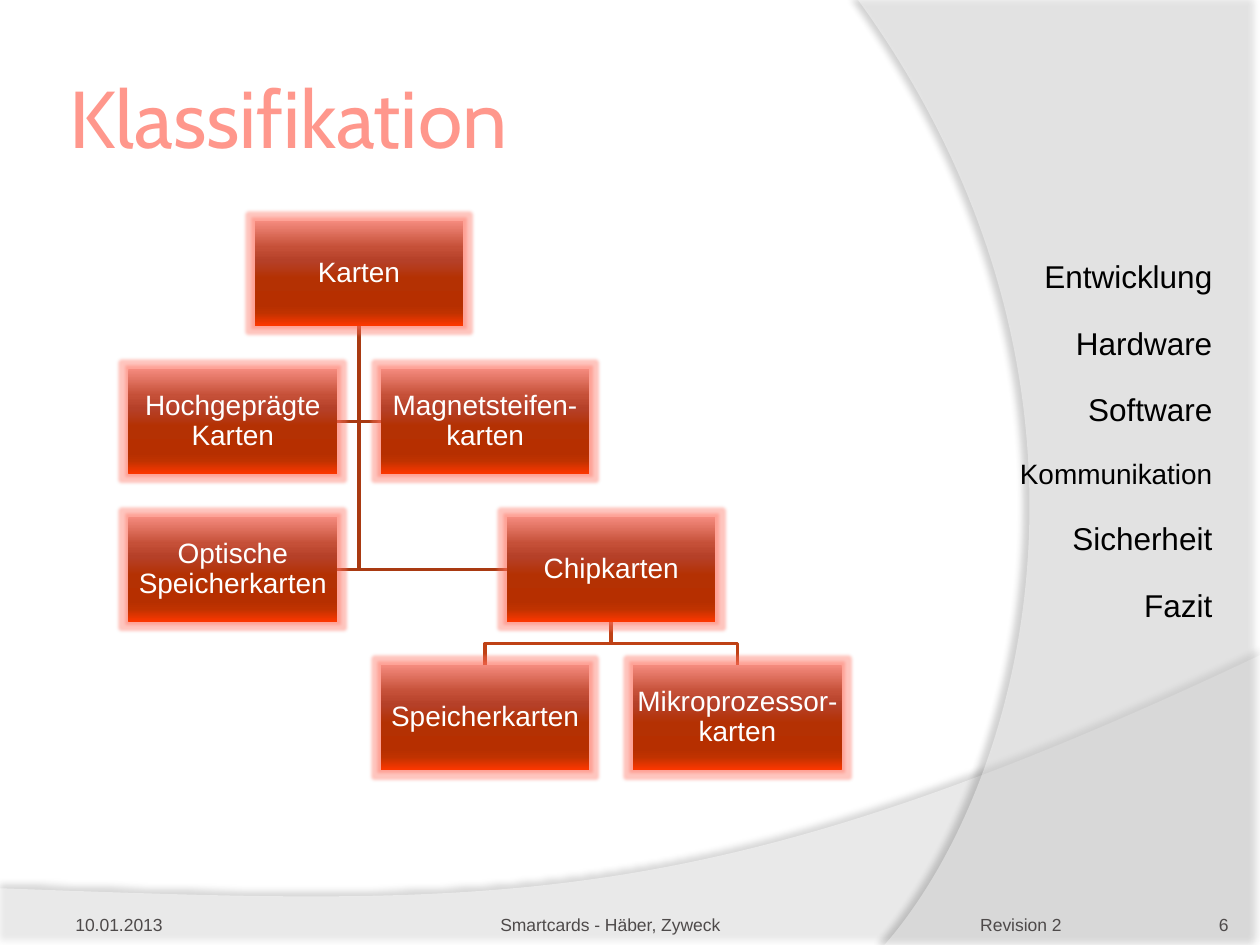
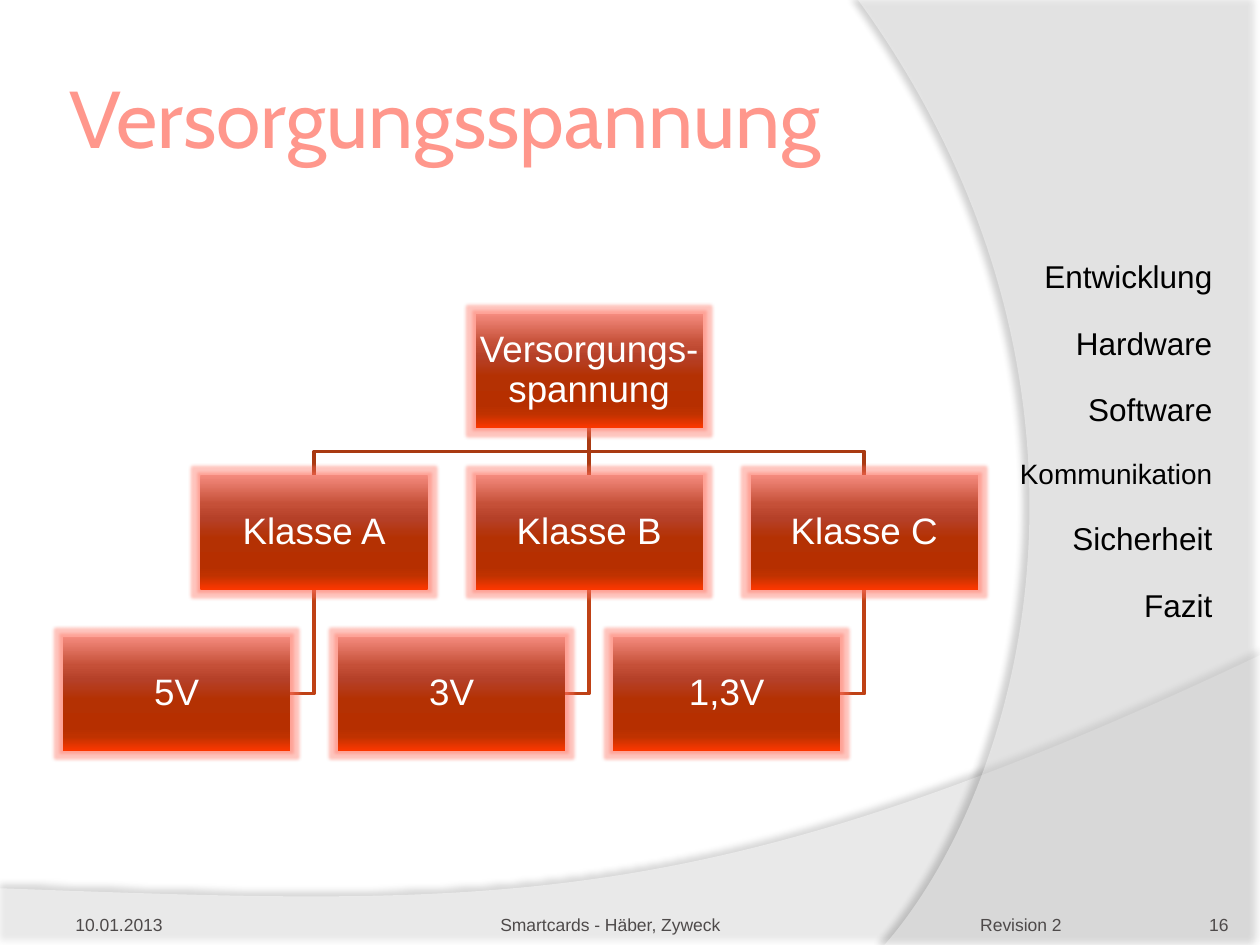
import dataclasses
import typing

import lxml.etree
import pptx
import pptx.dml.color
import pptx.enum.shapes
import pptx.enum.text
import pptx.oxml.ns
import pptx.util

RGBColor = pptx.dml.color.RGBColor
Align = pptx.enum.text.PP_ALIGN
Anchor = pptx.enum.text.MSO_ANCHOR
Inches, Pt = pptx.util.Inches, pptx.util.Pt

WHITE = RGBColor(0xFF, 0xFF, 0xFF)
BLACK = RGBColor(0, 0, 0)
TITLE_PINK = RGBColor(0xFF, 0x97, 0x8C)
GLOW_RED = RGBColor(0xFF, 0x6E, 0x5C)
FOOTER_GREY = RGBColor(0x4E, 0x4A, 0x4A)
ROOT_LINE = RGBColor(0xA9, 0x3A, 0x12)
BRANCH_LINE = RGBColor(0xBF, 0x41, 0x15)
BOX_GRADIENT = (
    (0, RGBColor(0xF4, 0x8A, 0x7D)),
    (25, RGBColor(0xC5, 0x50, 0x38)),
    (38, RGBColor(0xB5, 0x40, 0x28)),
    (55, RGBColor(0xB4, 0x31, 0x03)),
    (80, RGBColor(0xB6, 0x2F, 0x00)),
    (88, RGBColor(0xBF, 0x32, 0x00)),
    (100, RGBColor(0xFB, 0x37, 0x00)),
)

SLIDE_WIDTH, SLIDE_HEIGHT = Inches(10), Inches(7.5)
TOP, LEFT, BOTTOM, RIGHT = range(4)  # connection sites of a rectangle
CHAPTERS = ("Entwicklung", "Hardware", "Software", "Kommunikation", "Sicherheit", "Fazit")
CHAPTER_SIZES = {"Kommunikation": 16}

Point = tuple[float, float]


@dataclasses.dataclass(frozen=True)
class Region:
    """A rectangle in percent of the slide's width and height."""
    left: float
    top: float
    width: float
    height: float

    def lengths(self) -> tuple[int, int, int, int]:
        return (across(self.left), down(self.top), across(self.width), down(self.height))


@dataclasses.dataclass(frozen=True)
class Band:
    """A translucent area: a Bézier curve closed by straight corners, in percent."""
    curve: tuple[Point, Point, Point, Point]
    corners: tuple[Point, ...]
    opacity: int
    shadow_opacity: int
    shadow_distance: float
    shadow_angle: int


@dataclasses.dataclass(frozen=True)
class Node:
    """A box of a tree; side is where the line from the parent arrives."""
    text: str
    column: int
    row: int
    parent: typing.Optional[int] = None
    side: int = TOP


@dataclasses.dataclass(frozen=True)
class Tree:
    title: str
    number: int
    left: float
    top: float
    box_width: float
    font_size: int
    nodes: tuple[Node, ...]


BANDS = (
    Band(curve=((100, 69.33), (55.9, 97.2), (39.1, 95.87), (0, 94)),
         corners=((0, 100), (100, 100)),
         opacity=45, shadow_opacity=35, shadow_distance=3.5, shadow_angle=270),
    Band(curve=((70.2, 100), (81.6, 82.53), (89.9, 40), (68.1, 0)),
         corners=((100, 0), (100, 100)),
         opacity=40, shadow_opacity=45, shadow_distance=4, shadow_angle=180),
)

TREES = (
    Tree("Klassifikation", 6, left=10.2, top=23.4, box_width=16.55, font_size=16, nodes=(
        Node("Karten", 1, 0),
        Node("Hochgeprägte Karten", 0, 1, parent=0, side=RIGHT),
        Node("Magnetsteifen-karten", 2, 1, parent=0, side=LEFT),
        Node("Optische Speicherkarten", 0, 2, parent=0, side=RIGHT),
        Node("Chipkarten", 3, 2, parent=0, side=LEFT),
        Node("Speicherkarten", 2, 3, parent=4),
        Node("Mikroprozessor-karten", 4, 3, parent=4),
    )),
    Tree("Versorgungsspannung", 16, left=5, top=33.23, box_width=18.04, font_size=21, nodes=(
        Node("Versorgungs-spannung", 3, 0),
        Node("Klasse A", 1, 1, parent=0),
        Node("Klasse B", 3, 1, parent=0),
        Node("Klasse C", 5, 1, parent=0),
        Node("5V", 0, 2, parent=1, side=RIGHT),
        Node("3V", 2, 2, parent=2, side=RIGHT),
        Node("1,3V", 4, 2, parent=3, side=RIGHT),
    )),
)


def across(percent: float) -> int:
    return round(SLIDE_WIDTH * percent / 100)


def down(percent: float) -> int:
    return round(SLIDE_HEIGHT * percent / 100)


def add_element(parent, name: str, **attributes):
    element = lxml.etree.SubElement(parent, pptx.oxml.ns.qn(name))
    for key, value in attributes.items():
        element.set(key, str(value))
    return element


def add_color(parent, color: RGBColor, opacity: int = 100) -> None:
    element = add_element(parent, "a:srgbClr", val=color)
    if opacity < 100:
        add_element(element, "a:alpha", val=opacity * 1000)


def find(shape, name: str):
    return shape.element.find(".//" + pptx.oxml.ns.qn(name))


def write_text(frame, lines: typing.Sequence[str], *, size: float, color: RGBColor,
               font: str = "Arial", align=Align.LEFT, anchor=Anchor.MIDDLE,
               insets: tuple[float, ...] = (0.1, 0.05, 0.1, 0.05), before: float = 0,
               after: float = 0, spacing: float = 1.0,
               sizes: typing.Optional[dict[str, float]] = None) -> None:
    """Fill a text frame, one paragraph a line; sizes overrides the size of single lines."""
    frame.word_wrap = True
    frame.vertical_anchor = anchor
    (frame.margin_left, frame.margin_top,
     frame.margin_right, frame.margin_bottom) = map(Inches, insets)
    for index, line in enumerate(lines):
        paragraph = frame.add_paragraph() if index else frame.paragraphs[0]
        paragraph.alignment = align
        paragraph.line_spacing = spacing
        paragraph.space_before, paragraph.space_after = Pt(before), Pt(after)
        run = paragraph.add_run()
        run.text = line
        run.font.name = font
        run.font.size = Pt((sizes or {}).get(line, size))
        run.font.color.rgb = color


def add_text(slide, region: Region, *lines: str, **text_format) -> None:
    write_text(slide.shapes.add_textbox(*region.lengths()).text_frame, lines, **text_format)


def add_outline(slide, points: typing.Sequence[tuple[int, int]], close: bool):
    builder = slide.shapes.build_freeform(*points[0])
    builder.add_line_segments(points[1:], close=close)
    shape = builder.convert_to_shape()
    shape.shadow.inherit = False
    return shape


def bend_first_segments(shape) -> None:
    """Turn the first three straight segments into one cubic curve."""
    outline = find(shape, "a:path".replace("path", "moveTo")).getparent()
    segments = list(outline)[1:4]
    curve = add_element(outline, "a:cubicBezTo")
    outline.insert(1, curve)
    for segment in segments:
        curve.append(segment[0])
        outline.remove(segment)


def add_band(slide, band: Band) -> None:
    points = [(across(x), down(y)) for x, y in band.curve + band.corners]
    shape = add_outline(slide, points, close=True)
    bend_first_segments(shape)
    shape.fill.solid()
    shape.fill.fore_color.rgb = WHITE
    add_element(find(shape, "a:solidFill")[0], "a:alpha", val=band.opacity * 1000)
    shape.line.fill.background()
    shadow = add_element(find(shape, "a:effectLst"), "a:outerShdw", blurRad=Pt(4),
                         dist=Pt(band.shadow_distance), dir=band.shadow_angle * 60000,
                         algn="ctr", rotWithShape=0)
    add_color(shadow, BLACK, band.shadow_opacity)


def add_frame(slide, title: str, number: int) -> None:
    """Draw what every slide shares: bands, chapter list, title and footers."""
    for band in BANDS:
        add_band(slide, band)
    add_text(slide, Region(79.3, 3.8, 17.9, 85.6), *CHAPTERS, size=18, color=BLACK,
             align=Align.RIGHT, before=4.5, after=12, sizes=CHAPTER_SIZES)
    add_text(slide, Region(5, 4, 72.6, 16.67), title, size=46, color=TITLE_PINK,
             font="Cabin", insets=(0.05,) * 4)
    footers = (
        ("10.01.2013", 5, 17.4, Align.LEFT, (0.1, 0.05, 0.1, 0)),
        ("Smartcards - Häber, Zyweck", 24.83, 47.2, Align.CENTER, (0, 0.05, 0, 0)),
        ("Revision 2", 74.73, 12.6, Align.CENTER, (0, 0.05, 0, 0)),
        (str(number), 89.2, 8.3, Align.RIGHT, (0,) * 4),
    )
    for text, left, width, align, insets in footers:
        add_text(slide, Region(left, 93.6, width, 5.33), text, size=10, color=FOOTER_GREY,
                 align=align, anchor=Anchor.BOTTOM, insets=insets)


def add_box(slide, tree: Tree, node: Node):
    width = across(tree.box_width)
    left = across(tree.left) + round(node.column * 0.605 * width)
    top = down(tree.top) + round(node.row * 0.71 * width)
    box = slide.shapes.add_shape(pptx.enum.shapes.MSO_SHAPE.RECTANGLE,
                                 left, top, width, width // 2)
    box.fill.gradient()
    box.fill.gradient_angle = 270
    stops = find(box, "a:gsLst")
    for stop in list(stops):
        stops.remove(stop)
    for position, color in BOX_GRADIENT:
        add_color(add_element(stops, "a:gs", pos=position * 1000), color)
    box.line.fill.background()
    box.shadow.inherit = False
    add_color(add_element(find(box, "a:effectLst"), "a:glow", rad=Inches(0.05)), GLOW_RED, 40)
    write_text(box.text_frame, [node.text], size=tree.font_size, color=WHITE,
               align=Align.CENTER, insets=(0.01,) * 4, spacing=0.9)
    return box


def join_boxes(slide, parent, child, side: int, color: RGBColor) -> None:
    """Run a straight or right-angled line from the parent's bottom to a side of the child."""
    start_x, start_y = parent.left + parent.width // 2, parent.top + parent.height
    if side == TOP:
        end_x, end_y = child.left + child.width // 2, child.top
        middle = (start_y + end_y) // 2
        bends = [(start_x, middle), (end_x, middle)]
    else:
        end_x = child.left + (child.width if side == RIGHT else 0)
        end_y = child.top + child.height // 2
        bends = [(start_x, end_y)]
    if start_x == end_x:
        link = slide.shapes.add_connector(pptx.enum.shapes.MSO_CONNECTOR.STRAIGHT,
                                          start_x, start_y, end_x, end_y)
        link.begin_connect(parent, BOTTOM)
        link.end_connect(child, side)
        add_element(find(link, "p:spPr"), "a:effectLst")
    else:
        link = add_outline(slide, [(start_x, start_y), *bends, (end_x, end_y)], close=False)
        link.fill.background()
    link.line.color.rgb = color
    link.line.width = Pt(2)


def add_tree(slide, tree: Tree) -> None:
    boxes = [add_box(slide, tree, node) for node in tree.nodes]
    for node, box in reversed(list(zip(tree.nodes, boxes))):
        if node.parent is not None:
            color = BRANCH_LINE if node.parent else ROOT_LINE
            join_boxes(slide, boxes[node.parent], box, node.side, color)
    for box in boxes:  # bring the boxes in front of their lines
        box.element.getparent().append(box.element)


def main() -> None:
    presentation = pptx.Presentation()
    presentation.slide_width, presentation.slide_height = SLIDE_WIDTH, SLIDE_HEIGHT
    blank_layout = presentation.slide_layouts[6]
    for tree in TREES:
        slide = presentation.slides.add_slide(blank_layout)
        add_frame(slide, tree.title, tree.number)
        add_tree(slide, tree)
    presentation.save("out.pptx")


if __name__ == "__main__":
    main()
